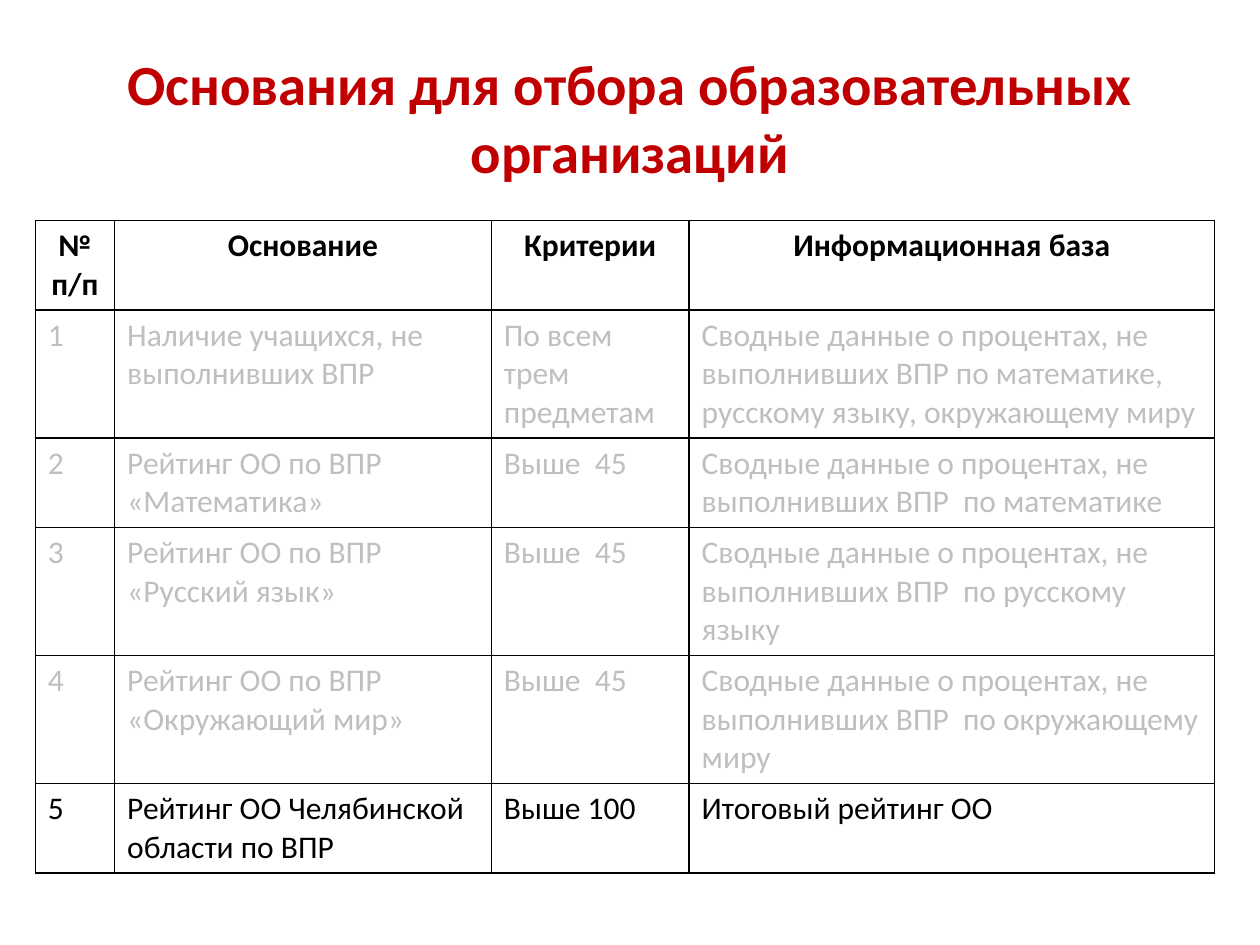
import lxml.etree
import pptx
import pptx.dml.color
import pptx.enum.text
import pptx.oxml.ns
import pptx.util

Inches = pptx.util.Inches
Pt = pptx.util.Pt
ALIGN = pptx.enum.text.PP_ALIGN
COLORS = {"title": "C00000", "text": "000000", "muted": "BFBFBF",
          "border": "000000", "cell": "FFFFFF"}
COLUMN_WIDTHS = [0.63, 2.99, 1.57, 4.17]
ROW_HEIGHT = 0.41
HEADER = ["№ п/п", "Основание", "Критерии", "Информационная база"]
SUMMARY = "Сводные данные о процентах, не выполнивших ВПР"
SUBJECTS = [("Математика", "математике"), ("Русский язык", "русскому языку"),
            ("Окружающий мир", "окружающему миру")]
GROUNDS = [
    ["Наличие учащихся, не выполнивших ВПР", "По всем трем предметам",
     f"{SUMMARY} по математике, русскому языку, окружающему миру"],
    *([f"Рейтинг ОО по ВПР «{name}»", "Выше  45", f"{SUMMARY}  по {dative}"]
      for name, dative in SUBJECTS),
    ["Рейтинг ОО Челябинской области по ВПР", "Выше 100", "Итоговый рейтинг ОО"],
]


class SlideBuilder:
    font = "Calibri"

    def __init__(self, slide):
        self.slide = slide

    def text(self, tf, text, color, size, bold=False, align=ALIGN.LEFT):
        p = tf.paragraphs[0]
        p.alignment = align
        r = p.add_run()
        r.text = text
        style = {"name": self.font, "size": Pt(size), "bold": bold}
        for key, value in style.items():
            setattr(r.font, key, value)
        r.font.color.rgb = pptx.dml.color.RGBColor.from_string(COLORS[color])

    def title(self, text, left, top, width, height):
        sp = self.slide.shapes.title
        box = {"left": left, "top": top, "width": width, "height": height}
        for key, value in box.items():
            setattr(sp, key, Inches(value))
        tf = sp.text_frame
        frame = {"word_wrap": True, "auto_size": pptx.enum.text.MSO_AUTO_SIZE.NONE,
                 "vertical_anchor": pptx.enum.text.MSO_ANCHOR.MIDDLE}
        for key, value in frame.items():
            setattr(tf, key, value)
        self.text(tf, text, "title", 32.4, True, ALIGN.CENTER)

    def border(self, cell):
        qn = pptx.oxml.ns.qn
        tcPr = cell._tc.get_or_add_tcPr()
        for i, side in enumerate(("lnL", "lnR", "lnT", "lnB")):
            ln = lxml.etree.Element(qn(f"a:{side}"), w=str(Pt(1)))
            fill = lxml.etree.SubElement(ln, qn("a:solidFill"))
            lxml.etree.SubElement(fill, qn("a:srgbClr"), val=COLORS["border"])
            tcPr.insert(i, ln)

    def table(self, rows, left, top, widths, row_height, active_rows):
        table = self.slide.shapes.add_table(
            len(rows), len(widths), Inches(left), Inches(top),
            Inches(sum(widths)), Inches(row_height * len(rows))).table
        table.first_row = table.horz_banding = False
        for column, width in zip(table.columns, widths):
            column.width = Inches(width)
        for i, row in enumerate(rows):
            is_header = i == 0
            color = "text" if i in active_rows else "muted"
            align = ALIGN.CENTER if is_header else ALIGN.LEFT
            for j, text in enumerate(row):
                cell = table.cell(i, j)
                cell.fill.solid()
                cell.fill.fore_color.rgb = pptx.dml.color.RGBColor.from_string(COLORS["cell"])
                self.border(cell)
                self.text(cell.text_frame, text, color, 18, is_header, align)


def main():
    prs = pptx.Presentation()
    prs.slide_width, prs.slide_height = Inches(10), Inches(7.5)
    s = SlideBuilder(prs.slides.add_slide(prs.slide_layouts[5]))
    s.title("Основания для отбора образовательных организаций", 0.5, 0.3, 9, 1.25)
    rows = [HEADER] + [[str(n), *row] for n, row in enumerate(GROUNDS, 1)]
    s.table(rows, 0.28, 1.75, COLUMN_WIDTHS, ROW_HEIGHT, {0, len(GROUNDS)})
    prs.save("out.pptx")


if __name__ == "__main__":
    main()
